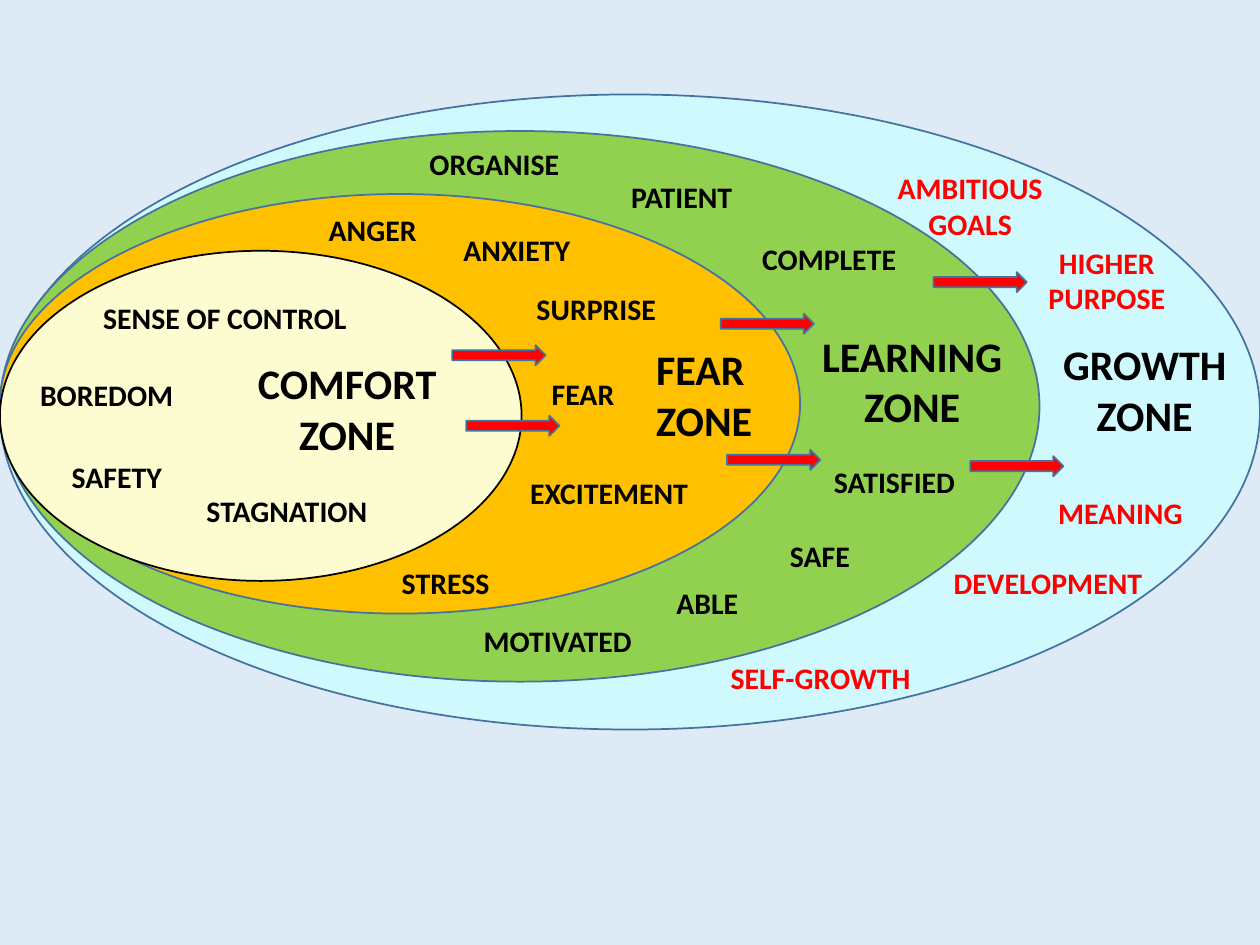
from typing import NamedTuple

from pptx import Presentation
from pptx.dml.color import RGBColor as RGB
from pptx.enum.shapes import MSO_SHAPE as Kind
from pptx.enum.text import MSO_AUTO_SIZE as Fit, PP_ALIGN as Align
from pptx.util import Inches, Pt

COLORS = {
    "back": "DEEBF7", "edge": "43739E", "black": "000000", "red": "FF0000",
    "growth": "CFF9FD", "learn": "92D050", "fear": "FFC000", "comfort": "FCFCD0",
}
ARROW_W, ARROW_H = 0.74, 0.16
WORD_H = 0.39


class Label(NamedTuple):
    text: str
    left: float
    top: float
    width: float
    height: float = WORD_H


class Zone(NamedTuple):
    fill: str
    oval: tuple[float, float, float]  # top, width, height
    title: Label
    words: list[Label]
    arrows: list[tuple[float, float]]  # left, top
    edge: str = "edge"
    ink: str = "black"
    align: Align = Align.CENTER
    wrap: bool = False


# From the innermost zone outwards
ZONES = [
    Zone("comfort", (1.99, 4.14, 2.62),
         Label("COMFORT ZONE", 1.86, 2.79, 1.79, 0.93),
         [Label("SAFETY", 0.47, 3.59, 0.92),
          Label("SENSE OF CONTROL", 0.72, 2.33, 2.15),
          Label("BOREDOM", 0.22, 2.94, 1.27),
          Label("STAGNATION", 1.54, 3.86, 1.49)],
         [], edge="black", wrap=True),
    Zone("fear", (1.54, 6.35, 3.33),
         Label("FEAR\nZONE", 5.11, 2.68, 0.97, 0.91),
         [Label("STRESS", 3.09, 4.43, 0.9),
          Label("ANXIETY", 3.58, 1.79, 1.06),
          Label("ANGER", 2.51, 1.63, 0.91),
          Label("FEAR", 4.28, 2.93, 0.7),
          Label("EXCITEMENT", 4.11, 3.72, 1.46),
          Label("SURPRISE", 4.16, 2.26, 1.16)],
         [(3.59, 2.74), (3.7, 3.3)], align=Align.LEFT),
    Zone("learn", (1.04, 8.25, 4.37),
         Label("LEARNING\nZONE", 6.42, 2.57, 1.64, 0.91),
         [Label("ORGANISE", 3.31, 1.11, 1.24),
          Label("PATIENT", 4.91, 1.37, 1.01),
          Label("COMPLETE", 5.95, 1.86, 1.27),
          Label("ABLE", 5.27, 4.59, 0.7),
          Label("SATISFIED", 6.52, 3.63, 1.17),
          Label("SAFE", 6.17, 4.22, 0.68),
          Label("MOTIVATED", 3.74, 4.89, 1.38)],
         [(5.72, 2.49), (5.77, 3.57)]),
    Zone("growth", (0.75, 10, 5.04),
         Label("GROWTH\nZONE", 8.33, 2.64, 1.51, 0.91),
         [Label("AMBITIOUS\nGOALS", 7.02, 1.3, 1.36, 0.67),
          Label("HIGHER\nPURPOSE", 8.22, 1.89, 1.13, 0.67),
          Label("DEVELOPMENT", 7.47, 4.43, 1.71),
          Label("SELF-GROWTH", 5.7, 5.19, 1.64),
          Label("MEANING", 8.3, 3.88, 1.2)],
         [(7.41, 2.16), (7.7, 3.62)], ink="red"),
]


def color(name: str) -> RGB:
    return RGB.from_string(COLORS[name])


def add_form(slide, kind: Kind, left: float, top: float, width: float,
             height: float, fill: str, edge: str = "edge") -> None:
    form = slide.shapes.add_shape(
        kind, Inches(left), Inches(top), Inches(width), Inches(height))
    form.shadow.inherit = False
    form.fill.solid()
    form.fill.fore_color.rgb = color(fill)
    form.line.color.rgb = color(edge)
    form.line.width = Pt(1)


def add_text(slide, label: Label, *, size: int = 17, ink: str = "black",
             align: Align = Align.LEFT, wrap: bool = False) -> None:
    """Write a bold label, one paragraph to a line."""
    box = slide.shapes.add_textbox(*map(Inches, label[1:]))
    frame = box.text_frame
    frame.word_wrap = wrap
    frame.auto_size = Fit.SHAPE_TO_FIT_TEXT
    frame.text = label.text
    for para in frame.paragraphs:
        para.alignment = align
        font = para.runs[0].font
        font.name, font.size, font.bold = "Calibri", Pt(size), True
        font.color.rgb = color(ink)


def add_labels(slide, zone: Zone) -> None:
    """Add the title, the words and the arrows that lead into a zone."""
    add_text(slide, zone.title, size=24, align=zone.align, wrap=zone.wrap)
    for word in zone.words:
        align = Align.CENTER if "\n" in word.text else Align.LEFT
        add_text(slide, word, ink=zone.ink, align=align)
    for left, top in zone.arrows:
        add_form(slide, Kind.RIGHT_ARROW, left, top, ARROW_W, ARROW_H, "red")


def main() -> None:
    deck = Presentation()
    deck.slide_width, deck.slide_height = Inches(10), Inches(7.5)
    slide = deck.slides.add_slide(deck.slide_layouts[6])
    slide.background.fill.solid()
    slide.background.fill.fore_color.rgb = color("back")
    for zone in reversed(ZONES):
        add_form(slide, Kind.OVAL, 0, *zone.oval, zone.fill, zone.edge)
    for zone in ZONES:
        add_labels(slide, zone)
    deck.save("out.pptx")


if __name__ == "__main__":
    main()
